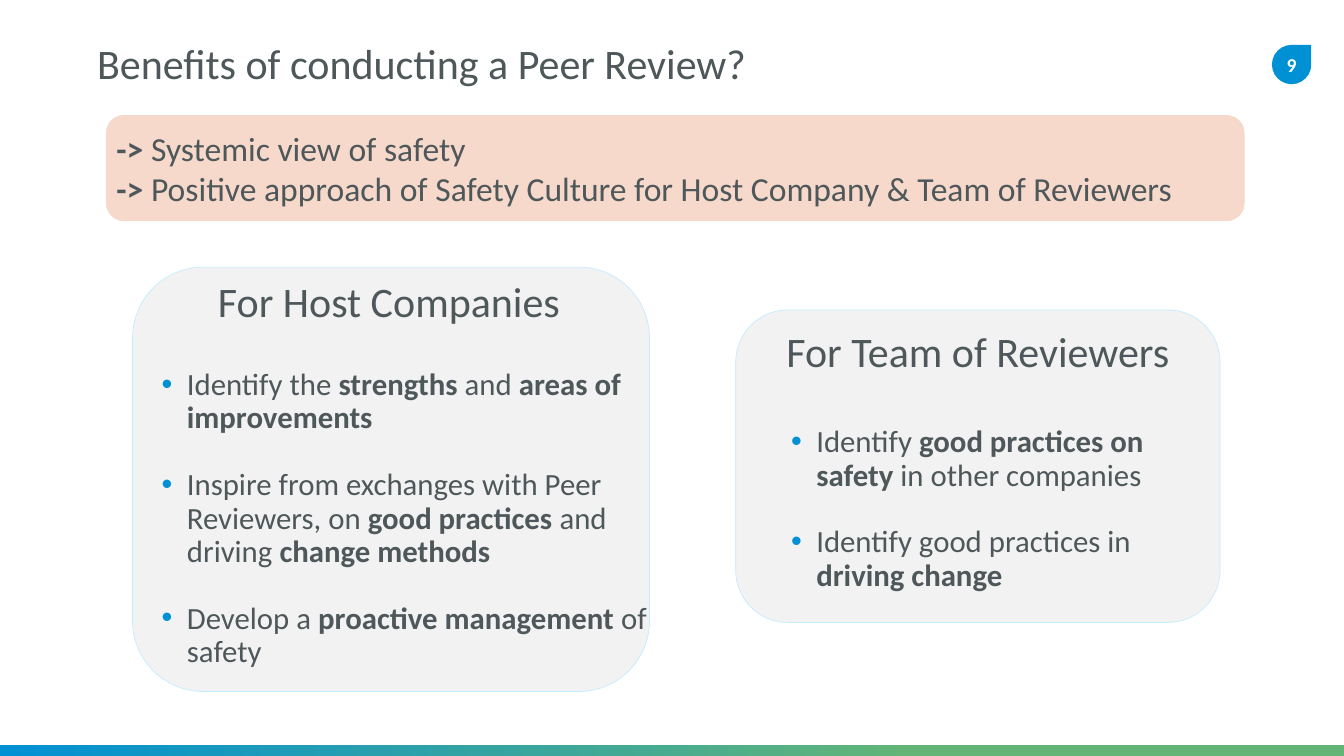
from dataclasses import dataclass

from lxml.etree import SubElement
from pptx import Presentation
from pptx.dml.color import RGBColor
from pptx.enum.shapes import MSO_SHAPE as Preset
from pptx.enum.text import MSO_ANCHOR as Anchor, PP_ALIGN as Align
from pptx.oxml.ns import qn
from pptx.util import Inches, Pt

FONT = "Calibri"
TEXT, BLUE, GREEN, WHITE = "4E5759", "0090D4", "62B576", "FFFFFF"
PEACH, GREY, PALE_BLUE = "F6D9CB", "F2F2F2", "C3ECFF"


@dataclass
class Area:
    left: float
    top: float
    width: float
    height: float

    def lengths(self) -> list:
        return [Inches(v) for v in (self.left, self.top, self.width, self.height)]


@dataclass
class Panel:
    card: Area
    text: Area
    heading: str
    heading_gap: int
    items: list[str]


PANELS = [
    Panel(Area(2.63, 5.3, 10.26, 8.42), Area(2.11, 5.54, 11.22, 7.94),
          "For Host Companies", 60, [
              "Identify the **strengths **and** areas of improvements**",
              "Inspire from exchanges with Peer Reviewers, on **good practices **"
              "and driving **change methods**",
              "Develop a **proactive management **of safety"]),
    Panel(Area(14.6, 6.15, 9.61, 6.2), Area(14.6, 6.52, 9.61, 5.46),
          "For Team of Reviewers", 71, [
              "Identify **good practices on safety** in other companies",
              "Identify good practices in **driving change**"]),
]
BANNER_LINES = [
    "**->** Systemic view of safety",
    "**->** Positive approach of Safety Culture for Host Company & Team of Reviewers",
]


def color(code: str) -> RGBColor:
    return RGBColor.from_string(code)


def add_preset(page, preset: Preset, area: Area, fill: str, line: str | None = None):
    shape = page.shapes.add_shape(preset, *area.lengths())
    shape.shadow.inherit = False
    shape.fill.solid()
    shape.fill.fore_color.rgb = color(fill)
    if line:
        shape.line.color.rgb = color(line)
        shape.line.width = Pt(1)
    else:
        shape.line.fill.background()
    return shape


def add_text_box(page, area: Area):
    frame = page.shapes.add_textbox(*area.lengths()).text_frame
    frame.word_wrap = True
    return frame


def write(para, text: str, size: int, fill: str = TEXT, align: Align = Align.LEFT) -> None:
    """Fill a paragraph; parts between double asterisks are bold."""
    para.alignment = align
    para.font.name = FONT
    para.font.size = Pt(size)
    para.font.color.rgb = color(fill)
    for index, part in enumerate(text.split("**")):
        if part:
            span = para.add_run()
            span.text = part
            span.font.bold = index % 2 == 1


def add_bullet(para) -> None:
    properties = para._p.get_or_add_pPr()
    properties.set("marL", str(Inches(1.5)))
    properties.set("indent", str(Inches(-0.5)))
    bullet_color = SubElement(properties, qn("a:buClr"))
    SubElement(bullet_color, qn("a:srgbClr"), val=BLUE)
    SubElement(properties, qn("a:buFont"), typeface="Arial")
    SubElement(properties, qn("a:buChar"), char="•")
    properties.append(properties.find(qn("a:defRPr")))


def add_panel(page, panel: Panel) -> None:
    add_preset(page, Preset.ROUNDED_RECTANGLE, panel.card, GREY, PALE_BLUE)
    frame = add_text_box(page, panel.text)
    heading = frame.paragraphs[0]
    write(heading, panel.heading, 60, align=Align.CENTER)
    heading.line_spacing = 0.9
    heading.space_after = Pt(panel.heading_gap)
    for item in panel.items:
        para = frame.add_paragraph()
        write(para, item, 44)
        para.line_spacing = 0.9
        para.space_after = Pt(48)
        add_bullet(para)


def add_banner(page) -> None:
    banner = add_preset(page, Preset.ROUNDED_RECTANGLE,
                        Area(2.11, 2.29, 22.58, 2.09), PEACH, PEACH)
    frame = banner.text_frame
    frame.word_wrap = True
    frame.vertical_anchor = Anchor.MIDDLE
    for index, line in enumerate(BANNER_LINES):
        write(frame.add_paragraph() if index else frame.paragraphs[0], line, 48)


def add_title(page, text: str) -> None:
    frame = add_text_box(page, Area(1.83, 0.46, 23, 1.69))
    frame.vertical_anchor = Anchor.MIDDLE
    write(frame.paragraphs[0], text, 60)
    frame.paragraphs[0].line_spacing = 0.9


def add_page_number(page, number: int) -> None:
    badge = add_preset(page, Preset.TEAR, Area(25.24, 0.89, 0.78, 0.78), BLUE)
    frame = badge.text_frame
    frame.margin_left = frame.margin_right = frame.margin_top = frame.margin_bottom = 0
    frame.vertical_anchor = Anchor.MIDDLE
    write(frame.paragraphs[0], f"**{number}**", 28, WHITE, Align.CENTER)


def add_footer_bar(page) -> None:
    bar = add_preset(page, Preset.RECTANGLE, Area(0, 14.79, 26.67, 0.21), GREEN)
    bar.fill.gradient()
    bar.fill.gradient_angle = 180
    for stop, (position, code) in zip(bar.fill.gradient_stops, [(0.32, GREEN), (1, BLUE)]):
        stop.position = position
        stop.color.rgb = color(code)


def main() -> None:
    deck = Presentation()
    deck.slide_width, deck.slide_height = Inches(26.67), Inches(15)
    page = deck.slides.add_slide(deck.slide_layouts[6])
    add_footer_bar(page)
    add_page_number(page, 9)
    add_title(page, "Benefits of conducting a Peer Review?")
    for panel in PANELS:
        add_panel(page, panel)
    add_banner(page)
    deck.save("out.pptx")


if __name__ == "__main__":
    main()
